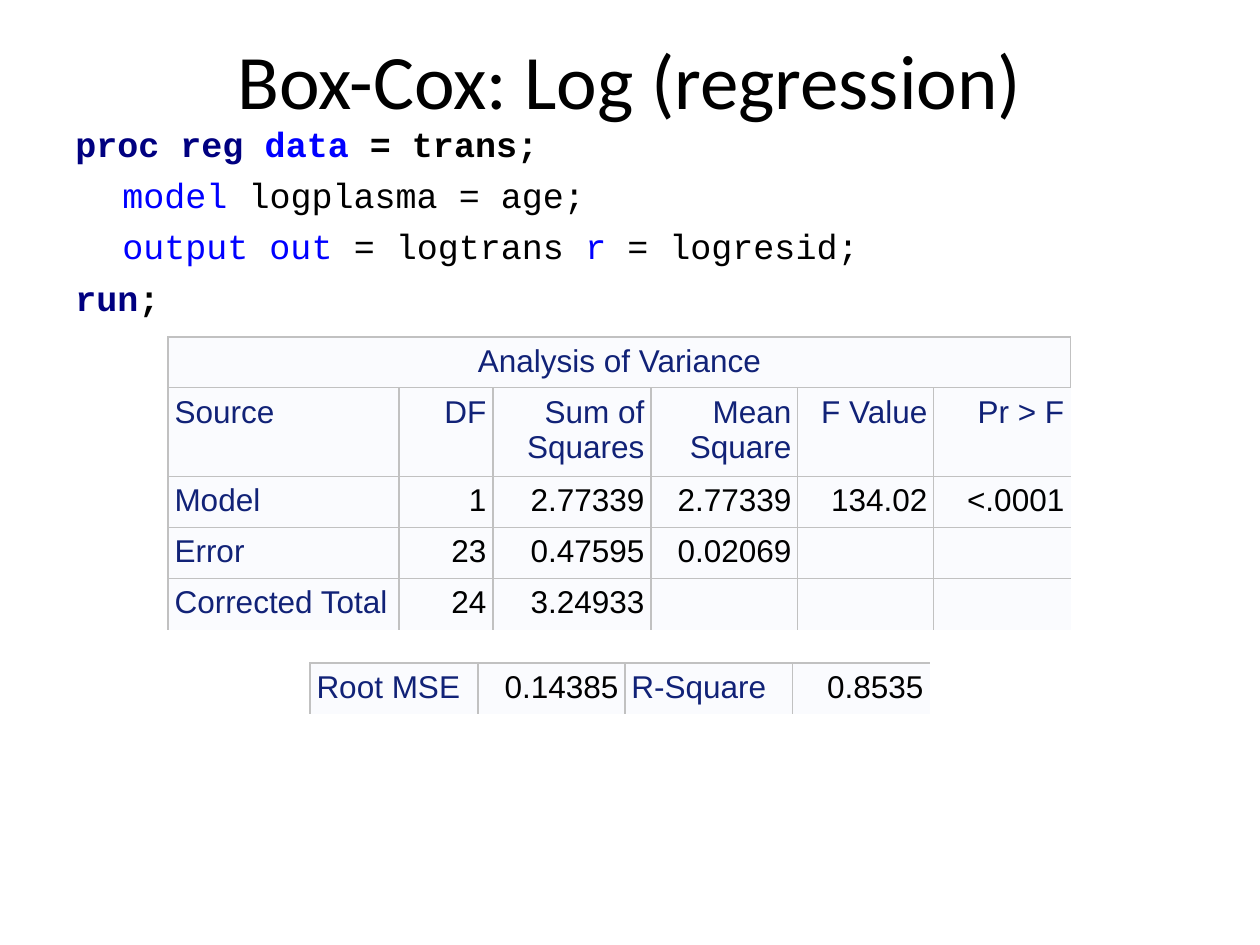
from lxml.etree import SubElement
from pptx import Presentation
from pptx.dml.color import RGBColor
from pptx.enum.text import MSO_ANCHOR, PP_ALIGN
from pptx.oxml.ns import qn
from pptx.util import Emu, Pt

NAVY, BLUE, BLACK = "000080", "0000FF", "000000"
LABEL, CELL, RULE = "112277", "FAFBFE", "C1C1C1"

TITLE = "Box-Cox: Log (regression)"
CODE = [
    (True, [("proc reg ", NAVY), ("data", BLUE), (" = trans;", BLACK)]),
    (False, [("\tmodel ", BLUE), ("logplasma = age;", BLACK)]),
    (False, [("\toutput out", BLUE), (" = logtrans ", BLACK), ("r", BLUE), (" = logresid;", BLACK)]),
    (True, [("run", NAVY), (";", BLACK)]),
]
ANOVA = {
    "corner": (168, 337),
    "widths": [231, 94, 158, 147, 136, 137],
    "heights": [49, 84, 49, 48, 48],
    "rows": [
        ["Analysis of Variance", "", "", "", "", ""],
        ["Source", "DF", "Sum of\nSquares", "Mean\nSquare", "F Value", "Pr > F"],
        ["Model", "1", "2.77339", "2.77339", "134.02", "<.0001"],
        ["Error", "23", "0.47595", "0.02069", "", ""],
        ["Corrected Total", "24", "3.24933", "", "", ""],
    ],
    "header_rows": 2,
    "label_columns": {0},
}
FIT = {
    "corner": (310, 663),
    "widths": [168, 147, 168, 137],
    "heights": [49],
    "rows": [["Root MSE", "0.14385", "R-Square", "0.8535"]],
    "header_rows": 0,
    "label_columns": {0, 2},
}


def px(length):
    """Turn pixels into EMU."""
    return Emu(round(length * 914400 / 126))


def rgb(value):
    """Turn a hex string into a colour."""
    return RGBColor.from_string(value)


def style(run, font, size, color, bold=False):
    """Format one run."""
    run.font.name, run.font.size, run.font.bold = font, Pt(size), bold
    run.font.color.rgb = rgb(color)


def add_frame(slide, left, top, width, height):
    """Add a wrapping text box and return its text frame."""
    frame = slide.shapes.add_textbox(px(left), px(top), px(width), px(height)).text_frame
    frame.word_wrap = True
    return frame


def rule_cell(cell, ruled):
    """Draw the ruled sides of a cell and clear the others, then fill it."""
    properties = cell._tc.get_or_add_tcPr()
    for side in ("lnL", "lnR", "lnT", "lnB"):
        line = SubElement(properties, qn(f"a:{side}"), w=str(Pt(0.75)))
        if side in ruled:
            paint = SubElement(line, qn("a:solidFill"))
            SubElement(paint, qn("a:srgbClr"), val=RULE)
        else:
            SubElement(line, qn("a:noFill"))
    cell.fill.solid()
    cell.fill.fore_color.rgb = rgb(CELL)


def add_statistics(slide, corner, widths, heights, rows, header_rows, label_columns):
    """Add a statistics table ruled on all but its right and bottom edges."""
    table = slide.shapes.add_table(
        len(rows), len(widths), *map(px, corner), px(sum(widths)), px(sum(heights))
    ).table
    table.first_row = table.horz_banding = False
    for column, width in zip(table.columns, widths):
        column.width = px(width)
    for row, height in zip(table.rows, heights):
        row.height = px(height)
    for r, texts in enumerate(rows):
        for c, text in enumerate(texts):
            cell = table.cell(r, c)
            cell.margin_left = cell.margin_right = cell.margin_top = cell.margin_bottom = Pt(3.75)
            ruled = {"lnL", "lnT"}
            if c < len(widths) - 1:
                ruled.add("lnR")
            if r < len(rows) - 1:
                ruled.add("lnB")
            rule_cell(cell, ruled)
            paragraph = cell.text_frame.paragraphs[0]
            paragraph.text = text
            paragraph.alignment = PP_ALIGN.LEFT if c in label_columns else PP_ALIGN.RIGHT
            is_label = r < header_rows or c in label_columns
            for run in paragraph.runs:
                style(run, "Arial", 18, LABEL if is_label else BLACK)
    return table


def main():
    """Build the slide."""
    deck = Presentation()
    deck.slide_width, deck.slide_height = px(1260), px(945)
    slide = deck.slides.add_slide(deck.slide_layouts[6])

    title = add_frame(slide, 63, 0, 1134, 158)
    title.vertical_anchor = MSO_ANCHOR.MIDDLE
    title.text = TITLE
    title.paragraphs[0].alignment = PP_ALIGN.CENTER
    style(title.paragraphs[0].runs[0], "Calibri", 44, BLACK)

    code = add_frame(slide, 63, 116, 1197, 829)
    for i, (bold, pieces) in enumerate(CODE):
        statement = code.add_paragraph() if i else code.paragraphs[0]
        statement.space_before = Pt(5.3)
        indent = statement._p.get_or_add_pPr()
        indent.set("marL", str(px(47)))
        indent.set("indent", str(-px(47)))
        for text, color in pieces:
            run = statement.add_run()
            run.text = text
            style(run, "Courier New", 20, color, bold)

    anova = add_statistics(slide, **ANOVA)
    heading = anova.cell(0, 0)
    heading.merge(anova.cell(0, 5))
    heading.text_frame.paragraphs[0].alignment = PP_ALIGN.CENTER
    add_statistics(slide, **FIT)

    deck.save("out.pptx")


if __name__ == "__main__":
    main()
